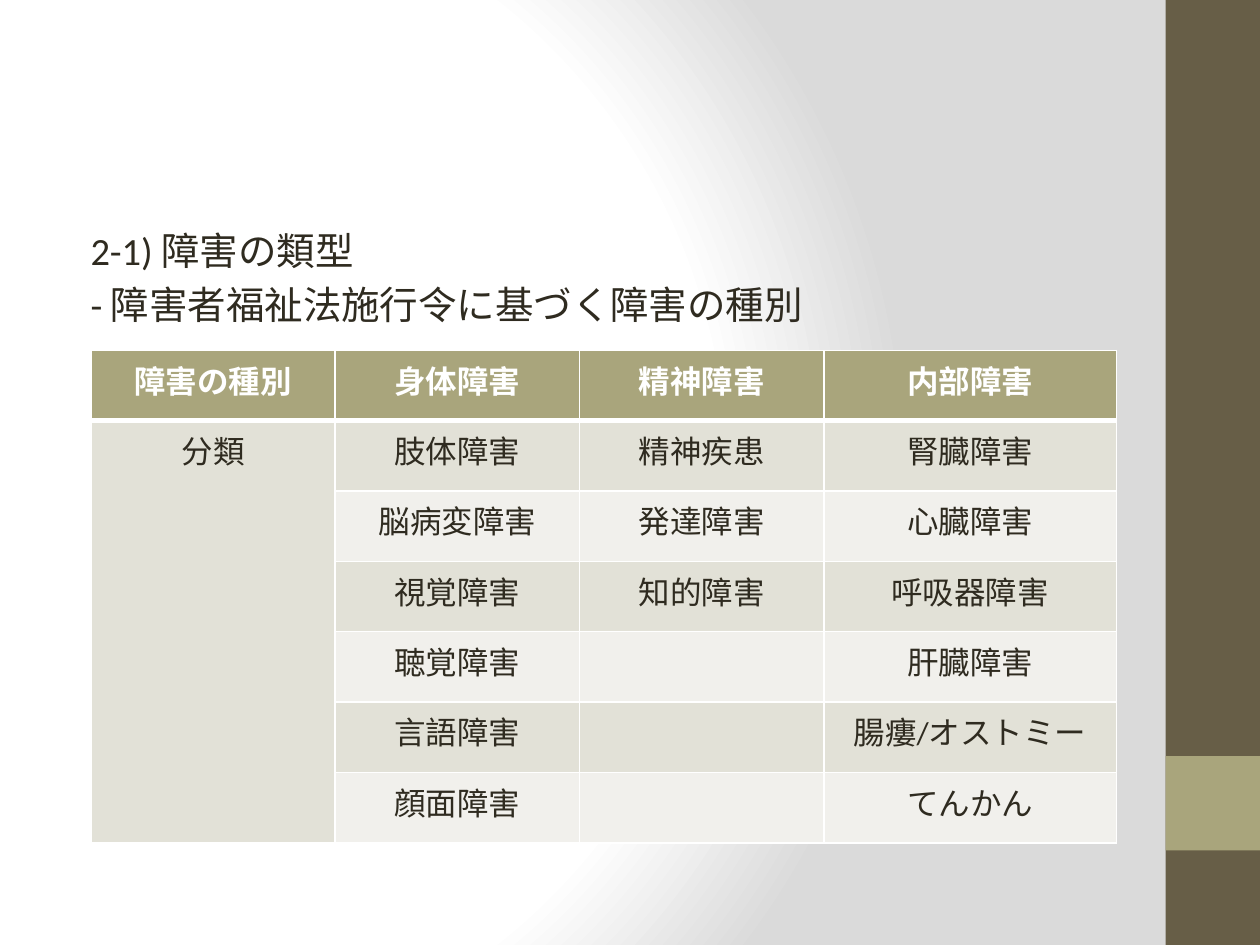
from pptx import Presentation
from pptx.dml.color import RGBColor
from pptx.enum.shapes import MSO_SHAPE as Shape
from pptx.enum.text import PP_ALIGN as Align
from pptx.oxml import parse_xml
from pptx.oxml.ns import nsdecls
from pptx.util import Pt

FONT = "Calibri"
INK, WHITE = "2F2B20", "FFFFFF"
BROWN, OLIVE = "675E47", "A9A57C"
BANDS = ["E2E1D7", "F1F0EC"]

HEADINGS = ["2-1) 障害の類型", "- 障害者福祉法施行令に基づく障害の種別"]
ROWS = [
    ["障害の種別", "身体障害", "精神障害", "内部障害"],
    ["分類", "肢体障害", "精神疾患", "腎臓障害"],
    ["", "脳病変障害", "発達障害", "心臓障害"],
    ["", "視覚障害", "知的障害", "呼吸器障害"],
    ["", "聴覚障害", "", "肝臓障害"],
    ["", "言語障害", "", "腸瘻/オストミー"],
    ["", "顔面障害", "", "てんかん"],
]
COLUMN_WIDTHS = [139.6, 139.6, 139.6, 167.2]
ROW_HEIGHT = 40.2


def color(value):
    return RGBColor.from_string(value)


def set_background(slide):
    """Circular gradient, white with a grey outer edge."""
    stops = "".join(
        f'<a:gs pos="{position * 1000}"><a:srgbClr val="{value}"/></a:gs>'
        for position, value in [(0, WHITE), (75, WHITE), (100, "DADADA")])
    slide.element.cSld.insert(0, parse_xml(
        f'<p:bg {nsdecls("p", "a")}><p:bgPr><a:gradFill rotWithShape="1">'
        f'<a:gsLst>{stops}</a:gsLst><a:path path="circle">'
        '<a:fillToRect l="20000" t="50000" r="100000" b="50000"/></a:path>'
        '</a:gradFill><a:effectLst/></p:bgPr></p:bg>'))


def add_bar(slide, top, height, fill):
    shape = slide.shapes.add_shape(
        Shape.RECTANGLE, Pt(666), Pt(top), Pt(54), Pt(height))
    shape.shadow.inherit = False
    shape.fill.solid()
    shape.fill.fore_color.rgb = color(fill)
    shape.line.fill.background()


def format_runs(paragraph, size, font_color, bold=False):
    for run in paragraph.runs:
        run.font.name = FONT
        run.font.size = Pt(size)
        run.font.bold = bold
        run.font.color.rgb = color(font_color)


def add_headings(slide):
    box = slide.shapes.add_textbox(Pt(36), Pt(126), Pt(600), Pt(378))
    text_frame = box.text_frame
    text_frame.word_wrap = True
    text_frame.text = "\n".join(HEADINGS)
    for paragraph in text_frame.paragraphs:
        paragraph.space_before = Pt(4.4)
        paragraph._p.get_or_add_pPr().set("marL", str(Pt(8.64)))
        format_runs(paragraph, 22, INK)


def set_borders(cell, top, bottom):
    """White borders; the line elements come before the fill."""
    properties = cell._tc.get_or_add_tcPr()
    widths = {"lnL": 1, "lnR": 1, "lnT": top, "lnB": bottom}
    for index, (side, width) in enumerate(widths.items()):
        properties.insert(index, parse_xml(
            f'<a:{side} {nsdecls("a")} w="{Pt(width)}"><a:solidFill>'
            f'<a:srgbClr val="{WHITE}"/></a:solidFill></a:{side}>'))


def format_cell(cell, text, row):
    is_header = row == 0
    cell.text_frame.text = text
    paragraph = cell.text_frame.paragraphs[0]
    paragraph.alignment = Align.CENTER
    format_runs(paragraph, 18, WHITE if is_header else INK, is_header)
    # The merged first column keeps the colour of its top row
    band = 0 if cell.is_spanned else (row - 1) % 2
    cell.fill.solid()
    cell.fill.fore_color.rgb = color(OLIVE if is_header else BANDS[band])
    set_borders(cell, 3 if row == 1 else 1, 3 if is_header else 1)


def add_type_table(slide):
    frame = slide.shapes.add_table(
        len(ROWS), len(COLUMN_WIDTHS), Pt(52), Pt(200.2),
        Pt(sum(COLUMN_WIDTHS)), Pt(ROW_HEIGHT * len(ROWS)))
    table = frame.table
    for column, width in zip(table.columns, COLUMN_WIDTHS):
        column.width = Pt(width)
    for row in table.rows:
        row.height = Pt(ROW_HEIGHT)
    table.cell(1, 0).merge(table.cell(len(ROWS) - 1, 0))
    for row, texts in enumerate(ROWS):
        for column, text in enumerate(texts):
            format_cell(table.cell(row, column), text, row)


def main():
    presentation = Presentation()
    presentation.slide_width, presentation.slide_height = Pt(720), Pt(540)
    slide = presentation.slides.add_slide(presentation.slide_layouts[6])
    set_background(slide)
    # Side band with its accent square
    add_bar(slide, 0, 540, BROWN)
    add_bar(slide, 432, 54, OLIVE)
    # Content
    add_headings(slide)
    add_type_table(slide)
    presentation.save("out.pptx")


if __name__ == "__main__":
    main()
